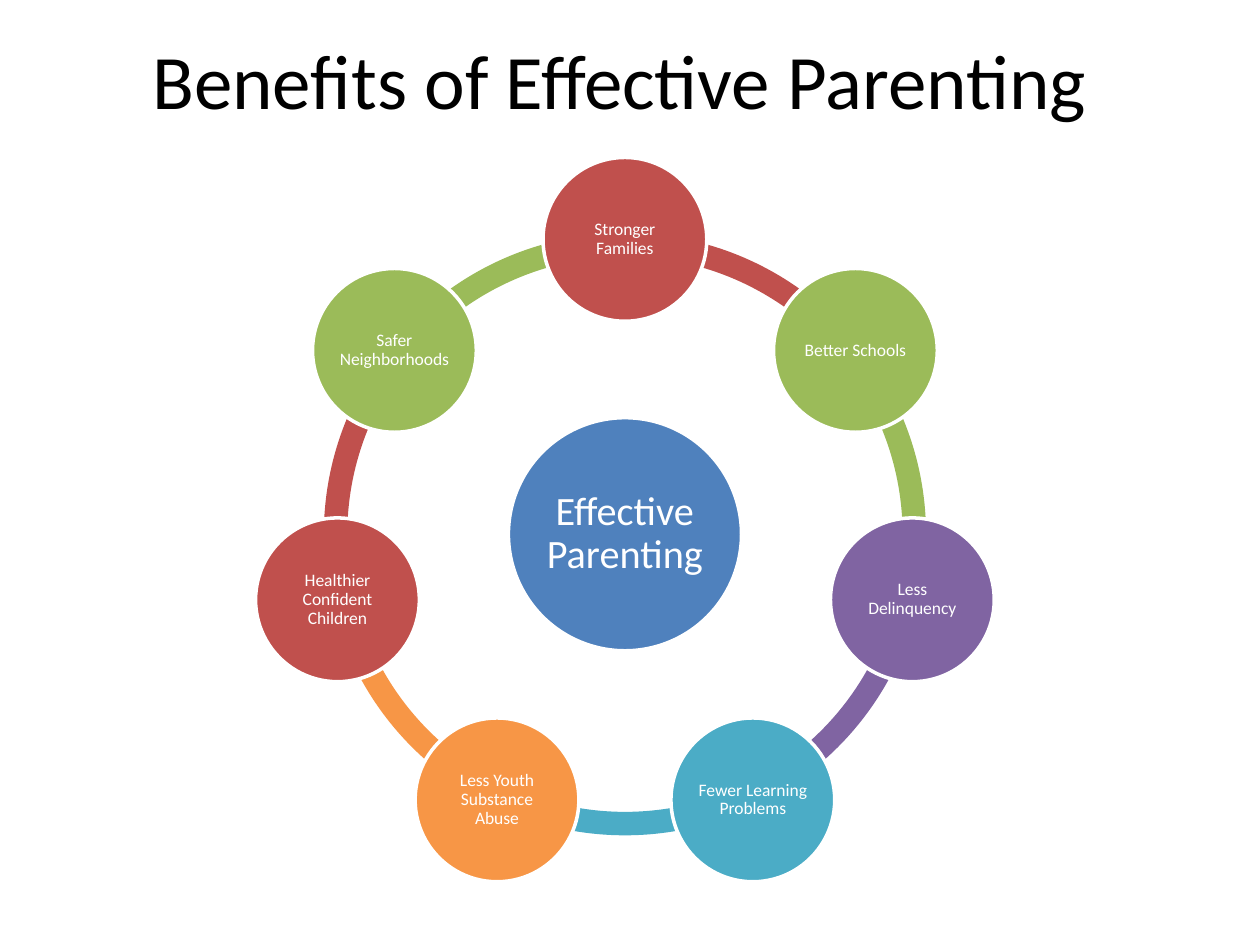
from dataclasses import dataclass
from math import cos, radians, sin

from pptx import Presentation
from pptx.dml.color import RGBColor as RGB
from pptx.enum.shapes import MSO_SHAPE as Shape
from pptx.enum.text import MSO_ANCHOR as Anchor, PP_ALIGN as Align
from pptx.util import Inches, Pt


@dataclass(frozen=True)
class Theme:
    font: str = "Calibri"
    black: str = "000000"
    white: str = "FFFFFF"
    blue: str = "4F81BD"
    red: str = "C0504D"
    green: str = "9BBB59"
    purple: str = "8064A2"
    teal: str = "4BACC6"
    orange: str = "F79646"
    title: int = 44
    hub: int = 23
    node: int = 10
    edge: int = 2


@dataclass(frozen=True)
class Node:
    text: str
    color: str


T = Theme()
NODES = [
    Node("Stronger Families", T.red),
    Node("Better Schools", T.green),
    Node("Less Delinquency", T.purple),
    Node("Fewer Learning Problems", T.teal),
    Node("Less Youth Substance Abuse", T.orange),
    Node("Healthier Confident Children", T.red),
    Node("Safer Neighborhoods", T.green),
]

# Wheel geometry, in inches and degrees
MID_X, MID_Y = 4.96, 4.24
RADIUS = 2.34
RING, HUB, DISC = 4.78, 1.85, 1.3
BAND = 0.039
STEP = 360 / len(NODES)


def write(frame, text: str, size: int, color: str, inset: float) -> None:
    """Put one centred paragraph in a text frame."""
    frame.word_wrap = True
    frame.vertical_anchor = Anchor.MIDDLE
    frame.margin_left = frame.margin_right = Inches(inset)
    frame.margin_top = frame.margin_bottom = Inches(inset)
    para = frame.paragraphs[0]
    para.text = text
    para.alignment = Align.CENTER
    para.font.name = T.font
    para.font.size = Pt(size)
    para.font.color.rgb = RGB.from_string(color)


def add_round(slide, kind: Shape, x: float, y: float, size: float, color: str):
    """Add a filled shape of equal width and height, centred on x, y."""
    shape = slide.shapes.add_shape(
        kind, Inches(x - size / 2), Inches(y - size / 2), Inches(size), Inches(size))
    shape.shadow.inherit = False
    shape.fill.solid()
    shape.fill.fore_color.rgb = RGB.from_string(color)
    shape.line.fill.background()
    return shape


def add_arc(slide, start: float, color: str) -> None:
    """Add the ring part that runs one step clockwise from start."""
    arc = add_round(slide, Shape.BLOCK_ARC, MID_X, MID_Y, RING, color)
    # Angles are stored in 1/60000 degree, adjustments in 1/100000
    arc.adjustments[0] = start % 360 * 0.6
    arc.adjustments[1] = (start + STEP) % 360 * 0.6
    arc.adjustments[2] = BAND


def add_disc(slide, node: Node, x: float, y: float,
             size: float, points: int, inset: float) -> None:
    """Add a labelled circle with a white edge."""
    disc = add_round(slide, Shape.OVAL, x, y, size, node.color)
    disc.line.color.rgb = RGB.from_string(T.white)
    disc.line.width = Pt(T.edge)
    write(disc.text_frame, node.text, points, T.white, inset)
    disc.text_frame.paragraphs[0].line_spacing = 0.9


def main() -> None:
    deck = Presentation()
    deck.slide_width, deck.slide_height = Inches(10), Inches(7.5)
    slide = deck.slides.add_slide(deck.slide_layouts[6])

    # Title
    box = slide.shapes.add_textbox(Inches(0.42), Inches(0), Inches(9), Inches(1.25))
    write(box.text_frame, "Benefits of Effective Parenting", T.title, T.black, 0.05)

    # Ring, each part in the colour of the circle it leaves
    turns = [-90 + i * STEP for i in range(len(NODES))]
    for node, turn in reversed(list(zip(NODES, turns))):
        add_arc(slide, turn, node.color)

    # Hub and outer circles
    add_disc(slide, Node("Effective Parenting", T.blue), MID_X, MID_Y, HUB, T.hub, 0.03)
    for node, turn in zip(NODES, turns):
        x = MID_X + RADIUS * cos(radians(turn))
        y = MID_Y + RADIUS * sin(radians(turn))
        add_disc(slide, node, x, y, DISC, T.node, 0.01)

    deck.save("out.pptx")


if __name__ == "__main__":
    main()
